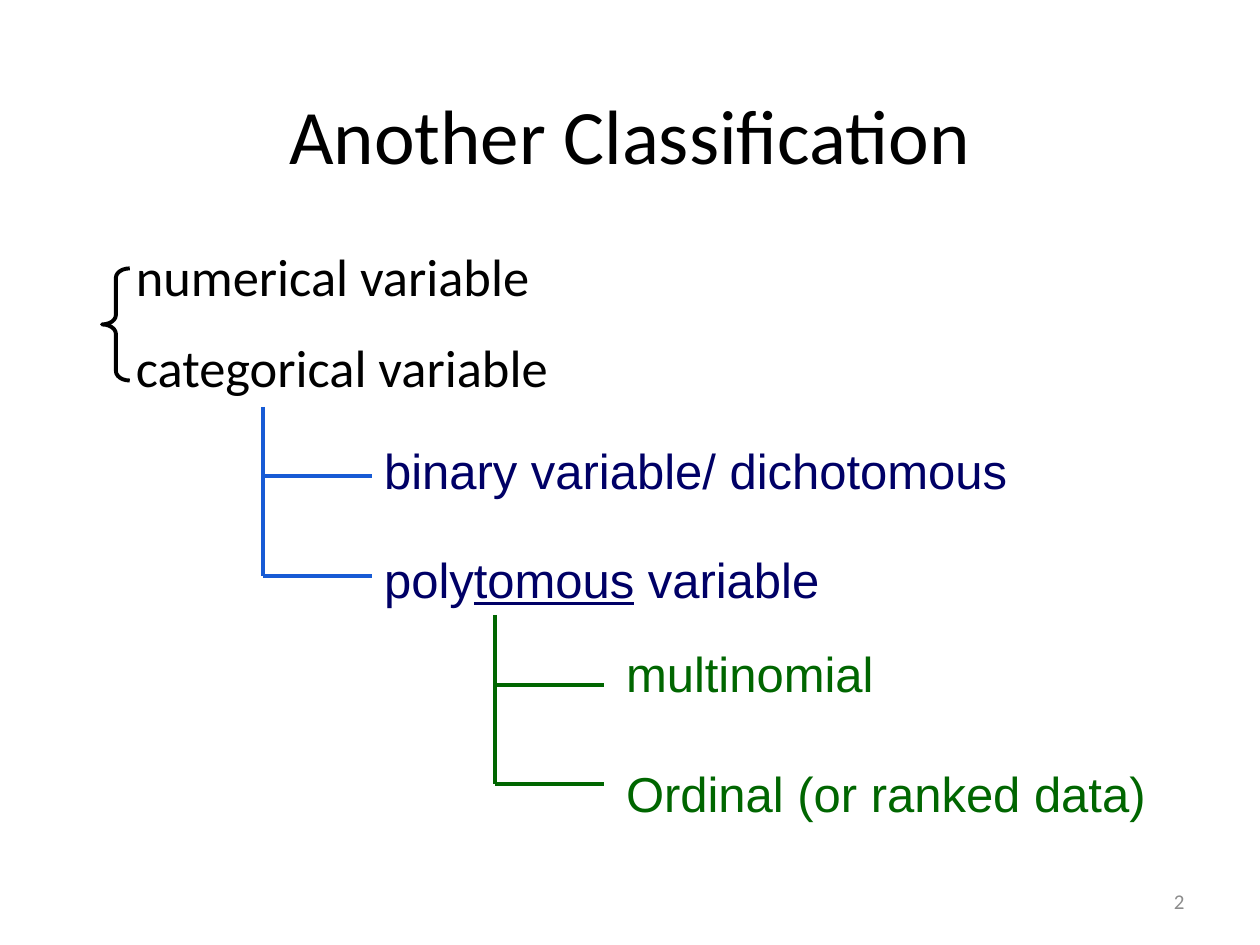
from lxml import etree
from pptx import Presentation
from pptx.dml.color import RGBColor
from pptx.enum.shapes import MSO_CONNECTOR, MSO_SHAPE
from pptx.enum.text import MSO_ANCHOR, PP_ALIGN
from pptx.oxml.ns import qn
from pptx.util import Inches, Pt

STRAIGHT = MSO_CONNECTOR.STRAIGHT
LEFT_BRACE = MSO_SHAPE.LEFT_BRACE
TOP, MIDDLE = MSO_ANCHOR.TOP, MSO_ANCHOR.MIDDLE
LEFT, CENTER, RIGHT = PP_ALIGN.LEFT, PP_ALIGN.CENTER, PP_ALIGN.RIGHT
BLACK, GRAY, NAVY, BLUE, GREEN = "000000", "8C8C8C", "000066", "175BD5", "006600"


def rgb(color):
    return RGBColor.from_string(color)


def write(sp, paragraphs, font, size, color, align=LEFT, anchor=TOP):
    """Each paragraph is (runs, format); each run is (text, underline)."""
    tf = sp.text_frame
    tf.word_wrap = True
    tf.vertical_anchor = anchor
    for i, (runs, fmt) in enumerate(paragraphs):
        p = tf.add_paragraph() if i else tf.paragraphs[0]
        p.alignment = align
        for name, value in fmt.items():
            setattr(p, name, value)
        for text, underline in runs:
            r = p.add_run()
            r.text = text
            r.font.color.rgb = rgb(color)
            for name, value in {"name": font, "size": Pt(size), "underline": underline}.items():
                setattr(r.font, name, value)


prs = Presentation()
prs.slide_width, prs.slide_height = Inches(10), Inches(7.5)
s = prs.slides.add_slide(prs.slide_layouts[5])

# Title
title = s.shapes.title
title.left, title.top, title.width, title.height = map(Inches, (0.75, 0.44, 8.5, 1.25))
write(title, [([("Another Classification", None)], {})], "Calibri", 44, BLACK, CENTER, MIDDLE)

# Text blocks: place, paragraphs, font, size, colour, alignment, anchor
blocks = [
    ((0.98, 1.89, 7.72, 1.97),
     [([("numerical variable", None)], {}),
      ([("categorical variable", None)], {"line_spacing": 1.2, "space_before": Pt(8.5)})],
     "Calibri", 30, BLACK, LEFT, TOP),
    ((2.95, 3.54, 6.45, 1.5),
     [([("binary variable/ dichotomous", None)], {"line_spacing": 0.8}),
      ([("poly", None), ("tomous", True), (" variable", None)],
       {"line_spacing": 0.8, "space_before": Pt(35)})],
     "Arial", 28, NAVY, LEFT, TOP),
    ((4.87, 5.06, 4.38, 1.81),
     [([("multinomial", None)], {}),
      ([("Ordinal (or ranked data)", None)], {"space_before": Pt(35)})],
     "Arial", 28, GREEN, LEFT, TOP),
    ((7.17, 6.95, 2.33, 0.4), [([("2", None)], {})], "Calibri", 12, GRAY, RIGHT, MIDDLE),
]
for place, *content in blocks:
    write(s.shapes.add_textbox(*map(Inches, place)), *content)

# Brace joining the two main kinds
brace = s.shapes.add_shape(LEFT_BRACE, *map(Inches, (0.81, 2.13, 0.22, 0.89)))
brace.shadow.inherit = False
brace.adjustments[0] = 0.34
brace.fill.background()
brace.line.color.rgb = rgb(BLACK)
brace.line.width = Pt(2.25)

# Branches: a stem with two arms each
ARM, STEM = 0.86, 1.34
for x, top, middle, color in [(2.09, 3.23, 3.78, BLUE), (3.93, 4.88, 5.44, GREEN)]:
    bottom = top + STEM
    for ends in [(x, top, x, bottom),
                 (x, middle, x + ARM, middle),
                 (x, bottom, x + ARM, bottom)]:
        line = s.shapes.add_connector(STRAIGHT, *map(Inches, ends))
        line.line.color.rgb = rgb(color)
        line.line.width = Pt(2.25)
        etree.SubElement(line._element.spPr, qn("a:effectLst"))

prs.save("out.pptx")
